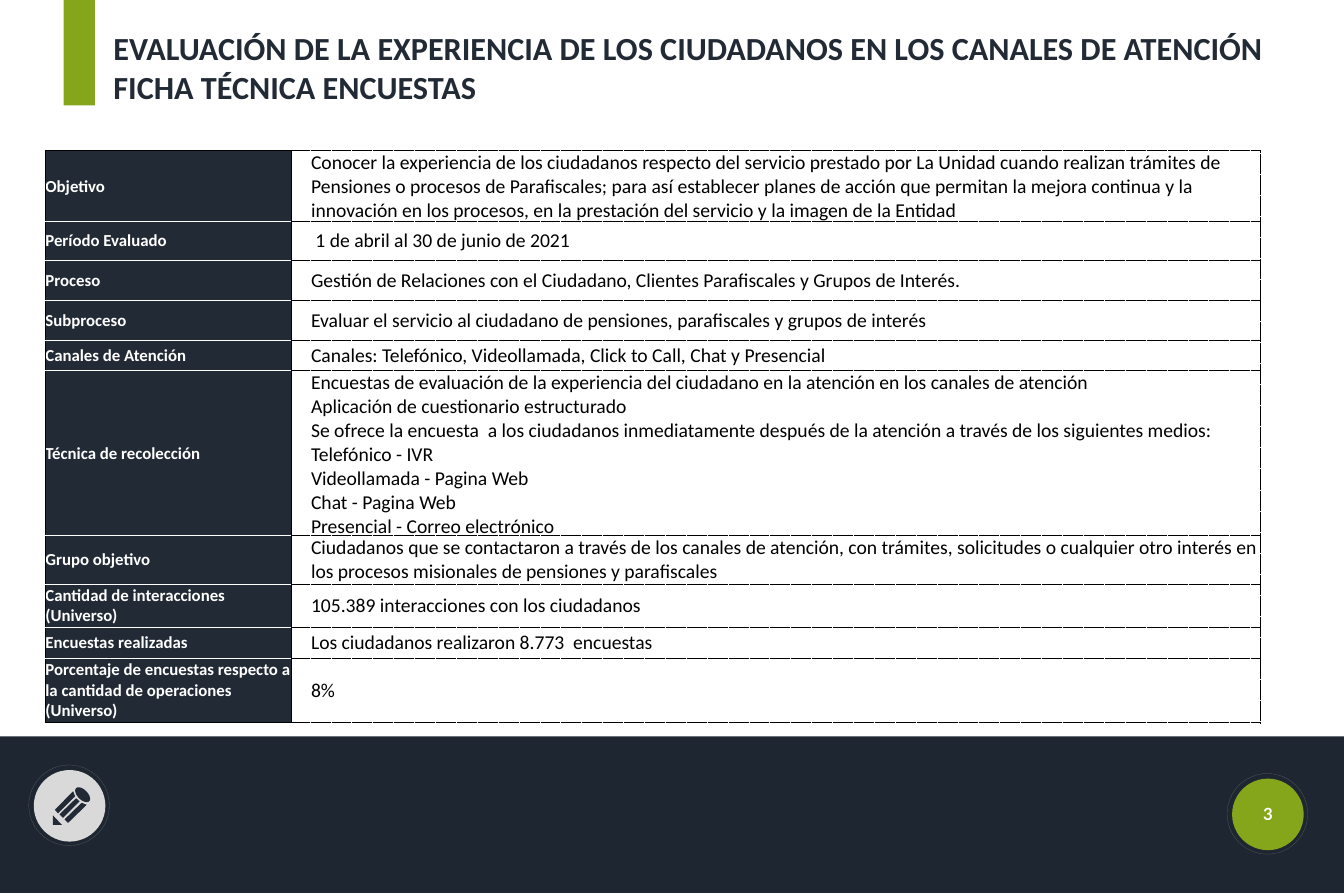
"""Build the survey fact sheet slide on citizen experience."""
from dataclasses import dataclass
from math import cos, pi, sin
from typing import Optional

from lxml.etree import SubElement
from pptx import Presentation
from pptx.dml.color import RGBColor
from pptx.enum.dml import MSO_LINE
from pptx.enum.shapes import MSO_SHAPE
from pptx.enum.text import MSO_ANCHOR, MSO_AUTO_SIZE, PP_ALIGN
from pptx.oxml.ns import qn
from pptx.shapes.autoshape import Shape
from pptx.slide import Slide
from pptx.table import _Cell
from pptx.text.text import TextFrame
from pptx.util import Inches, Pt


@dataclass(frozen=True)
class Theme:
    navy: str = "222A35"
    band: str = "1E2731"
    green: str = "85A61A"
    light: str = "D9D9D9"
    ring: str = "666666"
    white: str = "FFFFFF"
    black: str = "000000"
    font: str = "Calibri"
    number_font: str = "Lato"
    title_size: int = 46
    label_size: int = 24
    body_size: int = 28


@dataclass(frozen=True)
class TextStyle:
    size: int
    color: str
    bold: bool = True
    font: str = "Calibri"
    align: PP_ALIGN = PP_ALIGN.LEFT
    indent: float = 0


@dataclass(frozen=True)
class Box:
    left: float
    top: float
    width: float
    height: float


@dataclass(frozen=True)
class Border:
    color: str
    dash: str = "solid"


@dataclass(frozen=True)
class FactRow:
    height: float
    label: str
    lines: tuple[str, ...]


Point = tuple[float, float]

THEME = Theme()
SLIDE_WIDTH, SLIDE_HEIGHT = 26.66, 17.72
BAND_TOP = 14.61
TABLE_BOX = Box(0.89, 2.99, 24.1, 11.34)
LABEL_WIDTH = 4.88
TITLE_LINES = (
    "EVALUACIÓN DE LA EXPERIENCIA DE LOS CIUDADANOS EN LOS CANALES DE ATENCIÓN",
    "FICHA TÉCNICA ENCUESTAS",
)
FACTS = (
    FactRow(1.31, "Objetivo", (
        "Conocer la experiencia de los ciudadanos respecto del servicio prestado por La Unidad "
        "cuando realizan trámites de Pensiones o procesos de Parafiscales; para así establecer "
        "planes de acción que permitan la mejora continua y la innovación en los procesos, en la "
        "prestación del servicio y la imagen de la Entidad",)),
    FactRow(0.76, "Período Evaluado", (" 1 de abril al 30 de junio de 2021",)),
    FactRow(0.8, "Proceso", (
        "Gestión de Relaciones con el Ciudadano, Clientes Parafiscales y Grupos de Interés.",)),
    FactRow(0.8, "Subproceso", (
        "Evaluar el servicio al ciudadano de pensiones, parafiscales y grupos de interés",)),
    FactRow(0.59, "Canales de Atención", (
        "Canales: Telefónico, Videollamada, Click to Call, Chat y Presencial",)),
    FactRow(2.55, "Técnica de recolección", (
        "Encuestas de evaluación de la experiencia del ciudadano en la atención en los canales de atención",
        "Aplicación de cuestionario estructurado",
        "Se ofrece la encuesta  a los ciudadanos inmediatamente después de la atención a través de "
        "los siguientes medios:",
        "Telefónico - IVR",
        "Videollamada - Pagina Web",
        "Chat - Pagina Web",
        "Presencial - Correo electrónico")),
    FactRow(0.96, "Grupo objetivo", (
        "Ciudadanos que se contactaron a través de los canales de atención, con trámites, solicitudes "
        "o cualquier otro interés en los procesos misionales de pensiones y parafiscales",)),
    FactRow(0.86, "Cantidad de interacciones (Universo)", ("105.389 interacciones con los ciudadanos",)),
    FactRow(0.61, "Encuestas realizadas", ("Los ciudadanos realizaron 8.773  encuestas",)),
    FactRow(1.28, "Porcentaje de encuestas respecto a la cantidad de operaciones (Universo)", ("8%",)),
)
PENCIL_PARTS: tuple[tuple[Point, ...], ...] = (
    ((1.05, 16.18), (1.23, 16.37), (1.05, 16.37)),
    ((1.45, 15.7), (1.09, 16.07), (1.15, 16.14), (1.49, 15.8)),
    ((1.51, 15.84), (1.18, 16.16), (1.25, 16.23), (1.58, 15.9)),
    ((1.62, 15.93), (1.28, 16.26), (1.35, 16.33), (1.72, 15.97)),
)


def rgb(color: str) -> RGBColor:
    return RGBColor.from_string(color)


def write_lines(frame: TextFrame, lines: tuple[str, ...], style: TextStyle) -> None:
    for index, line in enumerate(lines):
        paragraph = frame.add_paragraph() if index else frame.paragraphs[0]
        paragraph.text = line
        paragraph.alignment = style.align
        font = paragraph.font
        font.name, font.size, font.bold = style.font, Pt(style.size), style.bold
        font.color.rgb = rgb(style.color)
        if style.indent:
            paragraph._p.get_or_add_pPr().set("marL", str(Inches(style.indent)))


def add_title(slide: Slide) -> None:
    title = slide.shapes.title
    title.left, title.top = Inches(2.15), Inches(0.51)
    title.width, title.height = Inches(23.42), Inches(1.65)
    frame = title.text_frame
    frame.word_wrap = False
    frame.auto_size = MSO_AUTO_SIZE.NONE
    frame.vertical_anchor = MSO_ANCHOR.TOP
    write_lines(frame, TITLE_LINES, TextStyle(THEME.title_size, THEME.navy))


def add_shape(slide: Slide, kind: MSO_SHAPE, box: Box, fill: Optional[str]) -> Shape:
    shape = slide.shapes.add_shape(
        kind, Inches(box.left), Inches(box.top), Inches(box.width), Inches(box.height))
    shape.shadow.inherit = False
    shape.line.fill.background()
    if fill:
        shape.fill.solid()
        shape.fill.fore_color.rgb = rgb(fill)
    else:
        shape.fill.background()
    return shape


def add_badge(slide: Slide, left: float, top: float, fill: str) -> None:
    add_shape(slide, MSO_SHAPE.OVAL, Box(left, top, 1.42, 1.42), fill)
    ring = add_shape(slide, MSO_SHAPE.OVAL, Box(left - 0.1, top - 0.1, 1.6, 1.6), None)
    ring.line.color.rgb = rgb(THEME.ring)
    ring.line.width = Pt(0.25)
    ring.line.dash_style = MSO_LINE.SQUARE_DOT


def eraser_outline(steps: int = 32) -> tuple[Point, ...]:
    angles = [2 * pi * step / steps for step in range(steps)]
    return tuple((1.64 + 0.13 * cos(angle) - 0.07 * sin(angle),
                  15.77 + 0.13 * cos(angle) + 0.07 * sin(angle)) for angle in angles)


def add_pencil(slide: Slide) -> None:
    first, *others = [[(Inches(x), Inches(y)) for x, y in part]
                      for part in (*PENCIL_PARTS, eraser_outline())]
    builder = slide.shapes.build_freeform(*first[0])
    builder.add_line_segments(first[1:])
    for part in others:
        builder.move_to(*part[0])
        builder.add_line_segments(part[1:])
    pencil = builder.convert_to_shape()
    pencil.shadow.inherit = False
    pencil.fill.solid()
    pencil.fill.fore_color.rgb = rgb(THEME.navy)
    pencil.line.fill.background()


def add_page_number(slide: Slide) -> None:
    box = slide.shapes.add_textbox(Inches(24.52), Inches(15.85), Inches(1.26), Inches(0.61))
    frame = box.text_frame
    frame.word_wrap = True
    frame.margin_left = frame.margin_right = Inches(0.2)
    frame.margin_top = frame.margin_bottom = Inches(0.1)
    style = TextStyle(THEME.label_size, THEME.white, font=THEME.number_font, align=PP_ALIGN.CENTER)
    write_lines(frame, ("3",), style)


def fill_cell(cell: _Cell, lines: tuple[str, ...], style: TextStyle, borders: dict[str, Border]) -> None:
    cell.vertical_anchor = MSO_ANCHOR.MIDDLE
    cell.margin_left = cell.margin_right = cell.margin_top = Inches(0.01)
    cell.margin_bottom = 0
    write_lines(cell.text_frame, lines, style)
    properties = cell._tc.get_or_add_tcPr()
    for side in "LRTB":
        line = SubElement(properties, qn(f"a:ln{side}"), w=str(Pt(1)))
        solid = SubElement(line, qn("a:solidFill"))
        SubElement(solid, qn("a:srgbClr"), val=borders[side].color)
        SubElement(line, qn("a:prstDash"), val=borders[side].dash)


def add_fact_table(slide: Slide) -> None:
    box = TABLE_BOX
    table = slide.shapes.add_table(len(FACTS), 2, Inches(box.left), Inches(box.top),
                                   Inches(box.width), Inches(box.height)).table
    table.first_row = table.horz_banding = False
    table.columns[0].width = Inches(LABEL_WIDTH)
    table.columns[1].width = Inches(box.width - LABEL_WIDTH)
    label_style = TextStyle(THEME.label_size, THEME.white)
    body_style = TextStyle(THEME.body_size, THEME.black, bold=False, indent=0.39)
    black, white = Border(THEME.black), Border(THEME.white)
    dotted = Border(THEME.black, "dot")
    for index, fact in enumerate(FACTS):
        table.rows[index].height = Inches(fact.height)
        label, body = table.cell(index, 0), table.cell(index, 1)
        top = white if index else black
        bottom = white if index < len(FACTS) - 1 else black
        fill_cell(label, (fact.label,), label_style, {"L": black, "R": black, "T": top, "B": bottom})
        fill_cell(body, fact.lines, body_style, {"L": black, "R": dotted, "T": dotted, "B": dotted})
        label.fill.solid()
        label.fill.fore_color.rgb = rgb(THEME.navy)
        body.fill.background()


def main() -> None:
    presentation = Presentation()
    presentation.slide_width, presentation.slide_height = Inches(SLIDE_WIDTH), Inches(SLIDE_HEIGHT)
    slide = presentation.slides.add_slide(presentation.slide_layouts[5])
    add_shape(slide, MSO_SHAPE.RECTANGLE,
              Box(0, BAND_TOP, SLIDE_WIDTH, SLIDE_HEIGHT - BAND_TOP), THEME.band)
    add_badge(slide, 0.67, 15.28, THEME.light)
    add_pencil(slide)
    add_badge(slide, 24.44, 15.45, THEME.green)
    add_page_number(slide)
    add_fact_table(slide)
    add_shape(slide, MSO_SHAPE.RECTANGLE, Box(1.26, 0, 0.62, 2.09), THEME.green)
    add_title(slide)
    presentation.save("out.pptx")


if __name__ == "__main__":
    main()
